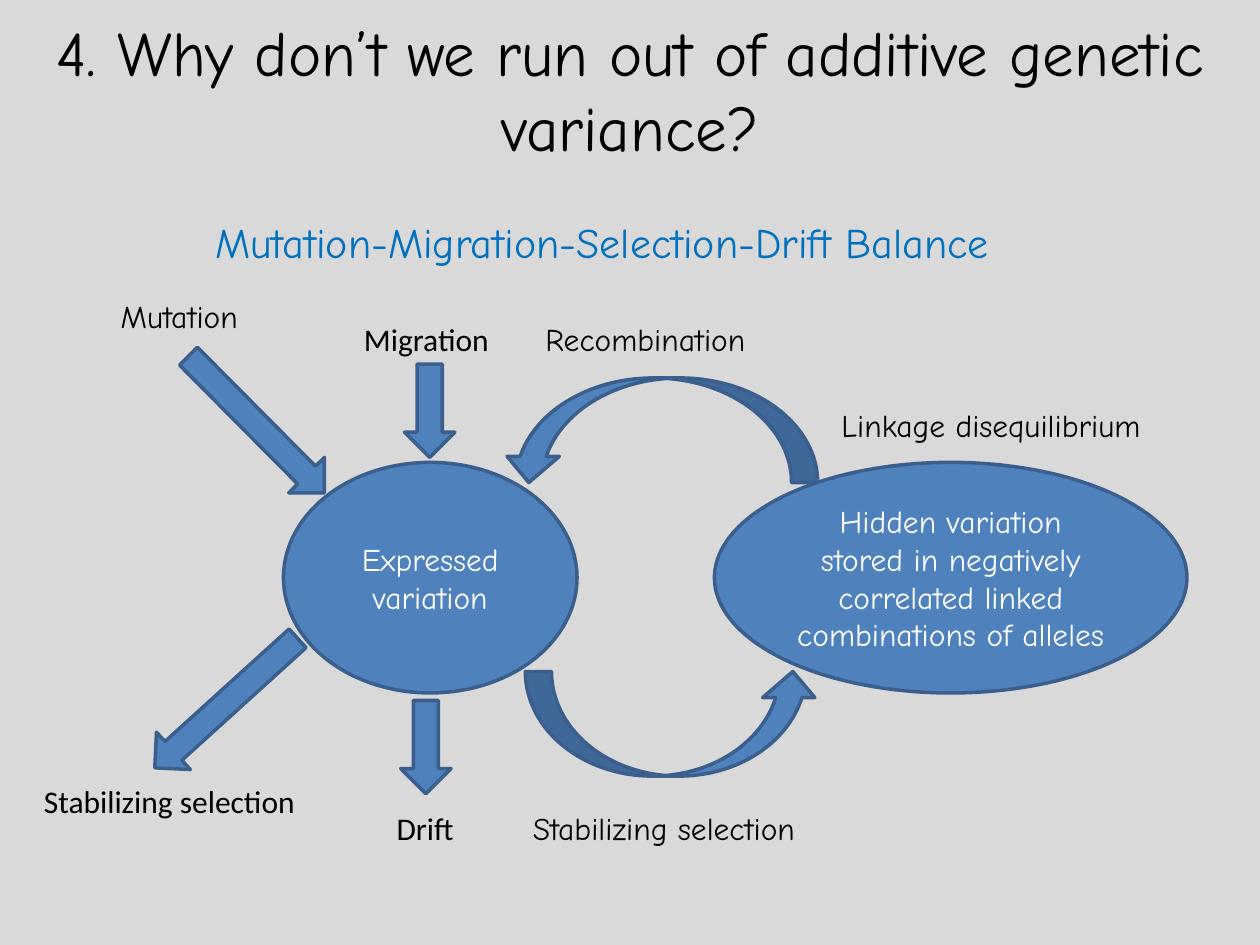
import pptx
import pptx.dml.color
import pptx.enum.shapes
import pptx.enum.text
import pptx.util

Inches = pptx.util.Inches
MSO = pptx.enum.shapes.MSO_SHAPE
PP_ALIGN = pptx.enum.text.PP_ALIGN
ANCHOR = pptx.enum.text.MSO_ANCHOR
AUTO_SIZE = pptx.enum.text.MSO_AUTO_SIZE

COLORS = {
    "background": "D9D9D9",
    "black": "000000",
    "white": "FFFFFF",
    "heading": "0070C0",
    "fill": "4F81BD",
    "outline": "3A5F8C",
}
HAND, PLAIN = "Comic Neue", "Calibri"


def rgb(name):
    return pptx.dml.color.RGBColor.from_string(COLORS[name])


def write(tf, text, size=18, font=HAND, color="black", align=PP_ALIGN.LEFT):
    p = tf.paragraphs[0]
    p.alignment = align
    r = p.add_run()
    r.text = text
    r.font.size = pptx.util.Pt(size)
    r.font.name = font
    r.font.color.rgb = rgb(color)


class Diagram:
    """Draws styled elements on the current slide."""

    def __init__(self, slide):
        self.s = slide
        slide.background.fill.solid()
        slide.background.fill.fore_color.rgb = rgb("background")

    def title(self, text, *box):
        tf = self.s.shapes.add_textbox(*map(Inches, box)).text_frame
        tf.word_wrap = True
        tf.vertical_anchor = ANCHOR.MIDDLE
        write(tf, text, size=36, align=PP_ALIGN.CENTER)

    def label(self, text, left, top, width, height=0.4, **style):
        box = map(Inches, (left, top, width, height))
        tf = self.s.shapes.add_textbox(*box).text_frame
        tf.word_wrap = False
        tf.auto_size = AUTO_SIZE.SHAPE_TO_FIT_TEXT
        write(tf, text, **style)

    def shape(self, kind, *box):
        sp = self.s.shapes.add_shape(kind, *map(Inches, box))
        sp.shadow.inherit = False
        sp.fill.solid()
        sp.fill.fore_color.rgb = rgb("fill")
        sp.line.color.rgb = rgb("outline")
        sp.line.width = pptx.util.Pt(2)
        return sp

    def pool(self, text, left, width):
        tf = self.shape(MSO.OVAL, left, 3.67, width, 1.83).text_frame
        tf.word_wrap = True
        tf.vertical_anchor = ANCHOR.MIDDLE
        write(tf, text, color="white", align=PP_ALIGN.CENTER)

    def arrow(self, kind, *box, rotation=0, flip=False):
        sp = self.shape(kind, *box)
        sp.rotation = rotation
        if flip:
            sp._element.spPr.xfrm.set("flipH", "1")


def main():
    prs = pptx.Presentation()
    prs.slide_width, prs.slide_height = Inches(10), Inches(7.5)
    d = Diagram(prs.slides.add_slide(prs.slide_layouts[6]))

    d.title("4. Why don’t we run out of additive genetic variance?", 0, 0.08, 10, 1.25)
    d.label("Mutation-Migration-Selection-Drift Balance", 1.61, 1.67, 7.13, 0.5,
            size=24, color="heading")

    d.pool("Expressed variation", 2.25, 2.33)
    d.pool("Hidden variation stored in negatively correlated linked "
           "combinations of alleles", 5.67, 3.75)

    d.arrow(MSO.CURVED_UP_ARROW, 4.17, 5.33, 2.33, 0.83)
    d.arrow(MSO.CURVED_DOWN_ARROW, 3.99, 3, 2.5, 0.83, flip=True)
    for left, top, width, rotation, flip in (
        (1.27, 3.17, 1.53, 45.2, False),
        (1.03, 5.38, 1.53, 317.8, True),
        (3.04, 3.06, 0.74, 90, False),
        (3.01, 5.73, 0.74, 90, False),
    ):
        d.arrow(MSO.RIGHT_ARROW, left, top, width, 0.4, rotation=rotation, flip=flip)

    for text, left, top, width, font in (
        ("Recombination", 4.23, 2.49, 1.89, HAND),
        ("Stabilizing selection", 4.13, 6.37, 2.58, HAND),
        ("Mutation", 0.86, 2.31, 1.26, HAND),
        ("Stabilizing selection", 0.25, 6.16, 2.22, PLAIN),
        ("Linkage disequilibrium", 6.58, 3.17, 2.78, HAND),
        ("Migration", 2.79, 2.49, 1.2, PLAIN),
        ("Drift", 3.05, 6.37, 0.66, PLAIN),
    ):
        d.label(text, left, top, width, font=font)

    prs.save("out.pptx")


if __name__ == "__main__":
    main()
